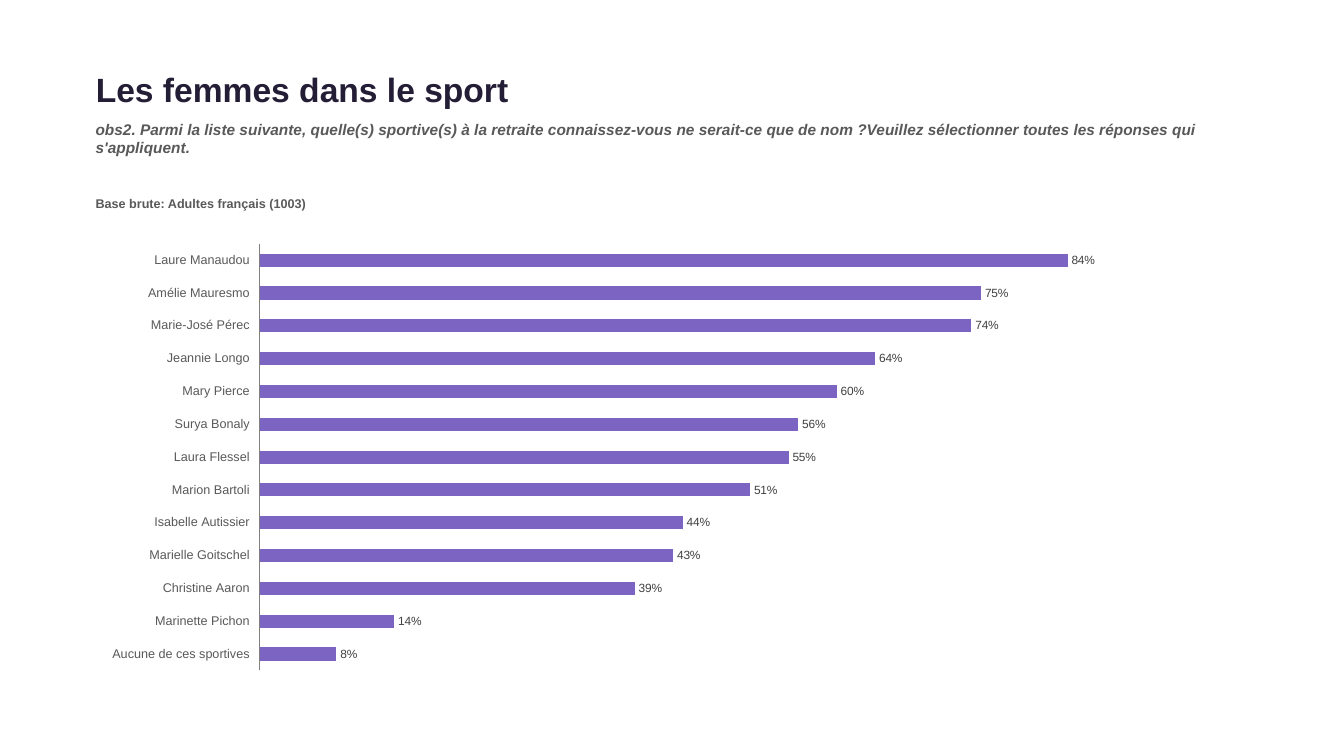
from lxml import etree
from pptx import Presentation
from pptx.chart import data
from pptx.dml import color as dml
from pptx.enum import chart as ch, text
from pptx.oxml import ns
from pptx.util import Pt

LEFT, WIDTH = 61.2, 837.4
INK, GREY, LABEL, AXIS, PURPLE = "241D36", "595959", "404040", "808080", "7C64C3"

KNOWN_BY = {
    "Laure Manaudou": 0.84,
    "Amélie Mauresmo": 0.75,
    "Marie-José Pérec": 0.74,
    "Jeannie Longo": 0.64,
    "Mary Pierce": 0.6,
    "Surya Bonaly": 0.56,
    "Laura Flessel": 0.55,
    "Marion Bartoli": 0.51,
    "Isabelle Autissier": 0.44,
    "Marielle Goitschel": 0.43,
    "Christine Aaron": 0.39,
    "Marinette Pichon": 0.14,
    "Aucune de ces sportives": 0.08,
}


def rgb(code):
    return dml.RGBColor.from_string(code)


class SurveySlide:
    font_name = "Arial"

    def __init__(self, deck):
        self.slide = deck.slides.add_slide(deck.slide_layouts[5])

    def style(self, font, size, color, bold=False, italic=False):
        font.name, font.size = self.font_name, Pt(size)
        font.bold, font.italic = bold, italic
        font.color.rgb = rgb(color)

    def fill_text(self, frame, wording, size, color, italic=False):
        """Fill a text frame with one bold, left-aligned paragraph."""
        frame.text = wording
        frame.word_wrap = True
        paragraph = frame.paragraphs[0]
        paragraph.alignment = text.PP_ALIGN.LEFT
        self.style(paragraph.runs[0].font, size, color, True, italic)

    def title(self, wording, top, height):
        heading = self.slide.shapes.title
        heading.left, heading.top = Pt(LEFT), Pt(top)
        heading.width, heading.height = Pt(WIDTH), Pt(height)
        self.fill_text(heading.text_frame, wording, 24, INK)
        heading.text_frame.vertical_anchor = text.MSO_ANCHOR.MIDDLE

    def caption(self, wording, top, height, size, italic=False):
        box = self.slide.shapes.add_textbox(Pt(LEFT), Pt(top), Pt(WIDTH), Pt(height))
        self.fill_text(box.text_frame, wording, size, GREY, italic)

    def bars(self, shares, top, width, height):
        table = data.CategoryChartData(number_format="0%")
        table.categories = list(reversed(shares))
        table.add_series("Series 1", list(reversed(shares.values())))
        chart = self.slide.shapes.add_chart(
            ch.XL_CHART_TYPE.BAR_CLUSTERED,
            Pt(LEFT), Pt(top), Pt(width), Pt(height), table).chart
        chart.has_legend = chart.has_title = False
        self.style(chart.font, 18, "000000")

        names = chart.category_axis
        names.major_tick_mark = names.minor_tick_mark = ch.XL_TICK_MARK.NONE
        names.tick_label_position = ch.XL_TICK_LABEL_POSITION.LOW
        names.has_major_gridlines = False
        names.format.line.color.rgb = rgb(AXIS)
        names.format.line.width = Pt(0.75)
        self.style(names.tick_labels.font, 9, GREY)

        scale = chart.value_axis
        scale.minimum_scale, scale.maximum_scale, scale.major_unit = 0, 1, 0.1
        scale.has_major_gridlines = False
        scale.tick_labels.number_format = "0.00%"
        scale.tick_labels.number_format_is_linked = False
        scale.visible = False

        plot = chart.plots[0]
        plot.gap_width, plot.overlap, plot.vary_by_categories = 150, -10, False
        fill = plot.series[0].format.fill
        fill.solid()
        fill.fore_color.rgb = rgb(PURPLE)
        labels = plot.series[0].data_labels
        labels.show_value = True
        labels.position = ch.XL_LABEL_POSITION.OUTSIDE_END
        labels.number_format, labels.number_format_is_linked = "0%", False
        self.style(labels.font, 8.5, LABEL)
        self.place_plot(chart, x=0.15, y=0.02, w=0.83, h=0.96)

    def place_plot(self, chart, **fractions):
        """Fix the inner plot area as fractions of the chart's size."""
        area = chart.element.find(".//" + ns.qn("c:plotArea"))
        for old in area.findall(ns.qn("c:layout")):
            area.remove(old)
        layout = etree.Element(ns.qn("c:layout"))
        area.insert(0, layout)
        manual = etree.SubElement(layout, ns.qn("c:manualLayout"))
        settings = {"layoutTarget": "inner", "xMode": "edge", "yMode": "edge", **fractions}
        for tag, value in settings.items():
            etree.SubElement(manual, ns.qn("c:" + tag)).set("val", str(value))


def main():
    deck = Presentation()
    deck.slide_width, deck.slide_height = Pt(960), Pt(540)
    survey = SurveySlide(deck)
    survey.title("Les femmes dans le sport", top=45.4, height=36)
    survey.caption(
        "obs2. Parmi la liste suivante, quelle(s) sportive(s) à la retraite "
        "connaissez-vous ne serait-ce que de nom ?Veuillez sélectionner toutes "
        "les réponses qui s'appliquent.",
        top=82.1, height=54, size=11, italic=True)
    survey.caption("Base brute: Adultes français (1003)", top=136.1, height=31.7, size=9)
    survey.bars(KNOWN_BY, top=167.8, width=828, height=317.5)
    deck.save("out.pptx")


if __name__ == "__main__":
    main()
